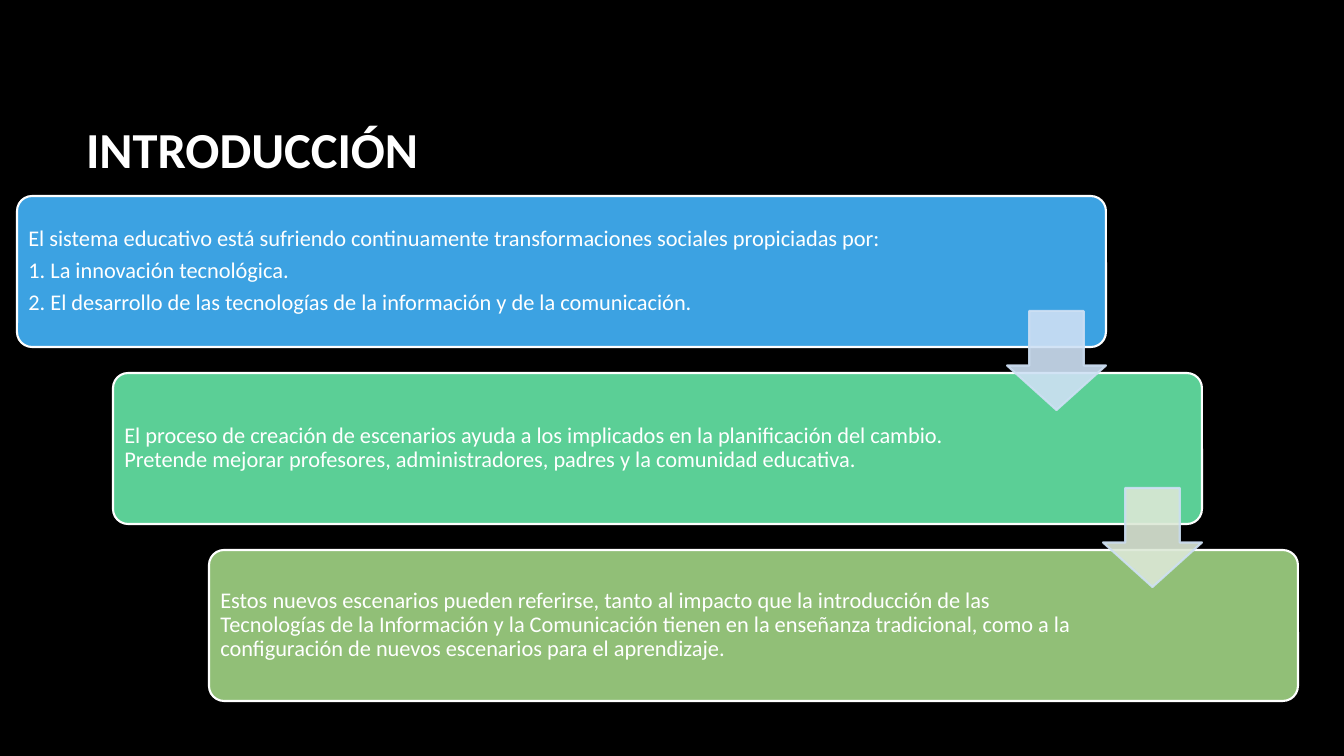
from lxml.etree import SubElement
from pptx import Presentation
from pptx.dml.color import RGBColor
from pptx.enum.shapes import MSO_SHAPE as SHAPE
from pptx.enum.text import MSO_ANCHOR as ANCHOR, PP_ALIGN as ALIGN
from pptx.oxml.ns import qn
from pptx.util import Emu, Pt

# Colours and font
BLACK = RGBColor(0x00, 0x00, 0x00)
WHITE = RGBColor(0xFF, 0xFF, 0xFF)
BLUE = RGBColor(0x3C, 0xA2, 0xE2)
GREEN = RGBColor(0x5B, 0xCF, 0x96)
OLIVE = RGBColor(0x91, 0xBF, 0x77)
PALE_BLUE = RGBColor(0xCE, 0xE0, 0xF4)
PALE_GREEN = RGBColor(0xDC, 0xE8, 0xD6)
FONT = "Calibri"

# Staircase of boxes, in px
SLIDE_W, SLIDE_H = 1344, 756
BOX_X, BOX_Y, BOX_W, BOX_H = 17, 196, 1089, 151
STEP_X, STEP_Y = 96, 177
ARROW, ARROW_RISE = 99, 36
INSET = 7

# Fill, right inset in px, paragraphs
STEPS = [
    (BLUE, 161, [
        "El sistema educativo está sufriendo continuamente transformaciones "
        "sociales propiciadas por:",
        "1. La innovación tecnológica.",
        "2. El desarrollo de las tecnologías de la información y de la "
        "comunicación."]),
    (GREEN, 201, [
        "El proceso de creación de escenarios ayuda a los implicados en la "
        "planificación del cambio. Pretende mejorar profesores, "
        "administradores, padres y la comunidad educativa."]),
    (OLIVE, 201, [
        "Estos nuevos escenarios pueden referirse, tanto al impacto que la "
        "introducción de las Tecnologías de la Información y la Comunicación "
        "tienen en la enseñanza tradicional, como a la configuración de "
        "nuevos escenarios para el aprendizaje."]),
]
ARROW_FILLS = [PALE_BLUE, PALE_GREEN]


def px(n):
    return Emu(round(n * 12192000 / SLIDE_W))


def style_font(font, size, bold=False):
    font.name = FONT
    font.size = Pt(size)
    font.bold = bold
    font.color.rgb = WHITE


def add_title(slide, text):
    sp = slide.shapes.title
    sp.left, sp.top, sp.width, sp.height = px(76), px(68), px(1117), px(160)
    tf = sp.text_frame
    tf.text = text
    tf.vertical_anchor = ANCHOR.MIDDLE
    p = tf.paragraphs[0]
    p.alignment = ALIGN.LEFT
    style_font(p.runs[0].font, 36, bold=True)


def add_preset(slide, kind, x, y, w, h, adjustments, fill, line):
    sp = slide.shapes.add_shape(kind, px(x), px(y), px(w), px(h))
    for i, value in enumerate(adjustments):
        sp.adjustments[i] = value
    sp.shadow.inherit = False
    sp.fill.solid()
    sp.fill.fore_color.rgb = fill
    sp.line.color.rgb = line
    sp.line.width = Pt(1.5)
    return sp


def add_step(slide, x, y, fill, right_inset, paragraphs):
    sp = add_preset(slide, SHAPE.ROUNDED_RECTANGLE, x, y, BOX_W, BOX_H,
                    [0.1], fill, WHITE)
    tf = sp.text_frame
    tf.word_wrap = True
    tf.vertical_anchor = ANCHOR.MIDDLE
    tf.margin_left = tf.margin_top = tf.margin_bottom = px(INSET)
    tf.margin_right = px(right_inset)
    for i, text in enumerate(paragraphs):
        p = tf.add_paragraph() if i else tf.paragraphs[0]
        p.text = text
        p.alignment = ALIGN.LEFT
        p.line_spacing = 0.9
        p.space_after = Pt(5.6)
        style_font(p.runs[0].font, 16)


def add_arrow(slide, x, y, fill):
    sp = add_preset(slide, SHAPE.DOWN_ARROW, x, y, ARROW, ARROW,
                    [0.55, 0.45], fill, PALE_BLUE)
    # 90 % opacity for fill and outline
    for color in sp._element.spPr.iter(qn("a:srgbClr")):
        SubElement(color, qn("a:alpha"), val="90000")


def main():
    prs = Presentation()
    prs.slide_width, prs.slide_height = px(SLIDE_W), px(SLIDE_H)
    slide = prs.slides.add_slide(prs.slide_layouts[5])
    slide.background.fill.solid()
    slide.background.fill.fore_color.rgb = BLACK

    add_title(slide, "INTRODUCCIÓN")

    # Boxes, each one step right and down
    for i, step in enumerate(STEPS):
        add_step(slide, BOX_X + i * STEP_X, BOX_Y + i * STEP_Y, *step)

    # Arrows over the lower right corner of each box but the last
    for i, fill in enumerate(ARROW_FILLS):
        add_arrow(slide, BOX_X + i * STEP_X + BOX_W - ARROW,
                  BOX_Y + i * STEP_Y + BOX_H - ARROW_RISE, fill)

    prs.save("out.pptx")


if __name__ == "__main__":
    main()
